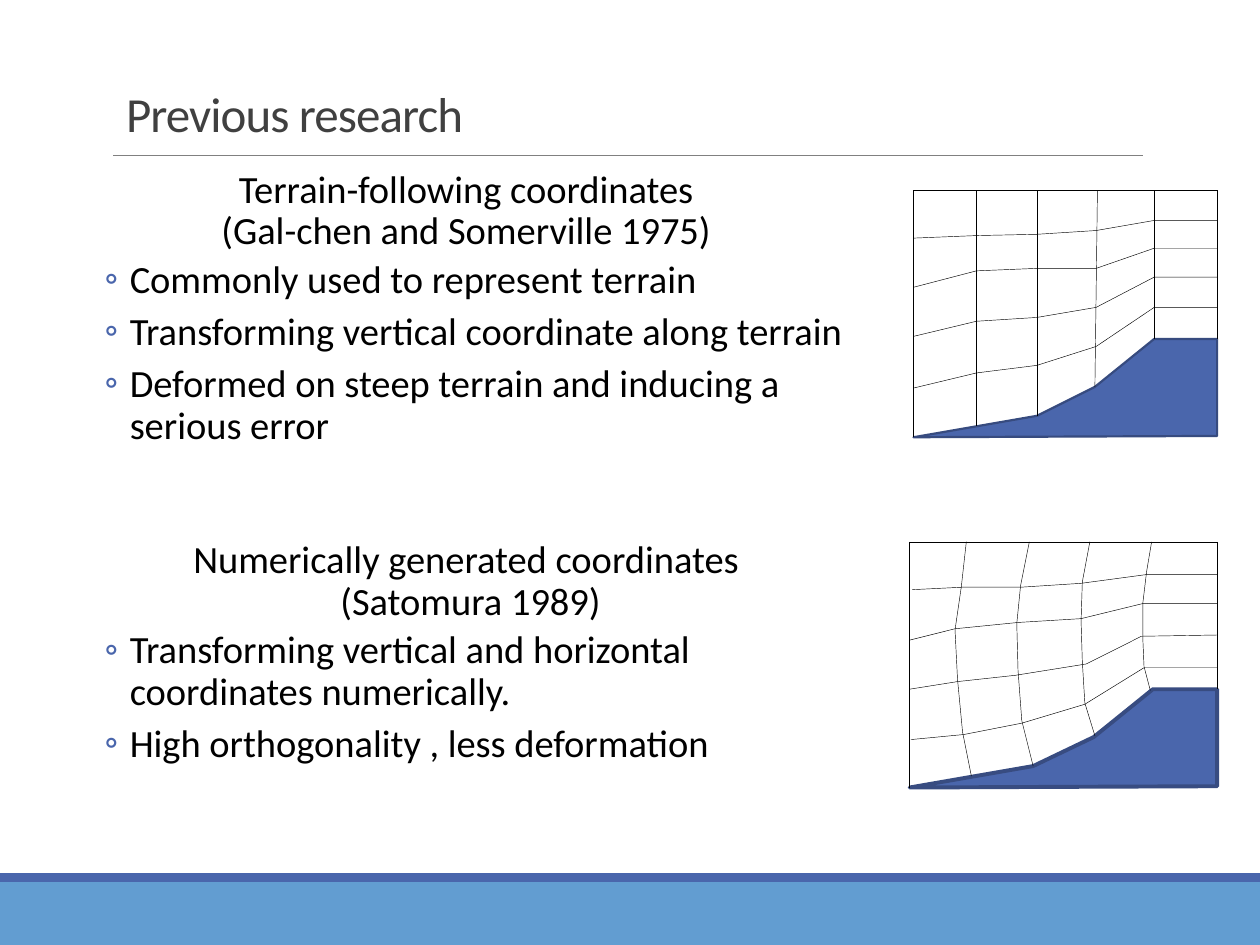
from dataclasses import dataclass

from lxml.etree import SubElement
from pptx import Presentation
from pptx.dml.color import RGBColor
from pptx.enum.shapes import MSO_CONNECTOR, MSO_SHAPE
from pptx.enum.text import MSO_ANCHOR as ANCHOR, MSO_AUTO_SIZE, PP_ALIGN as ALIGN
from pptx.oxml.ns import qn
from pptx.util import Inches, Pt

Point = tuple[float, float]
BLUE, LIGHT_BLUE, GREY, BLACK = "4A66AC", "629DD1", "808080", "000000"
GRID_WIDTH = 0.25


@dataclass
class TextBlock:
    top: float
    heading: str
    bullets: list[str]


@dataclass
class TerrainMesh:
    terrain: list[Point]
    edge: str
    edge_width: float
    straight: list[tuple[Point, Point]]
    curves: list[list[Point]]


BLOCKS = [
    TextBlock(1.3, "Terrain-following coordinates\v(Gal-chen and Somerville 1975)", [
        "Commonly used to represent terrain",
        "Transforming vertical coordinate along terrain",
        "Deformed on steep terrain and inducing a serious error"]),
    TextBlock(4.24, "Numerically generated coordinates\v (Satomura 1989)", [
        "Transforming vertical and horizontal coordinates numerically.",
        "High orthogonality , less deformation"]),
]

TERRAIN_FOLLOWING = TerrainMesh(
    terrain=[(7.25, 3.47), (8.23, 3.3), (8.69, 3.07), (9.16, 2.69), (9.66, 2.69), (9.66, 3.46)],
    edge="374B7F", edge_width=1.25,
    straight=[((7.25, 1.51), (9.67, 1.51))] + [
        ((bottom_x, bottom_y), (top_x, 1.51)) for bottom_x, bottom_y, top_x in [
            (9.66, 2.69, 9.66), (9.16, 2.69, 9.16), (8.69, 3.07, 8.71),
            (8.23, 3.3, 8.23), (7.75, 3.38, 7.75), (7.25, 3.47, 7.25)]],
    curves=[list(zip((7.25, 7.75, 8.23, 8.7, 9.16, 9.66), heights)) for heights in [
        (3.08, 2.96, 2.9, 2.75, 2.44, 2.44),
        (2.67, 2.55, 2.52, 2.44, 2.2, 2.2),
        (2.28, 2.15, 2.13, 2.13, 1.97, 1.97),
        (1.89, 1.87, 1.86, 1.83, 1.75, 1.75)]],
)

NUMERICAL = TerrainMesh(
    terrain=[(7.22, 6.25), (8.2, 6.08), (8.68, 5.85), (9.15, 5.47), (9.66, 5.47), (9.66, 6.24)],
    edge="384C81", edge_width=2.25,
    straight=[((7.22, 4.3), (9.66, 4.3)), ((9.66, 4.3), (9.66, 5.47)), ((7.22, 4.3), (7.22, 6.25))],
    curves=[
        [(9.13, 5.48), (9.08, 5.29), (9.07, 5.06), (9.07, 4.79), (9.1, 4.54), (9.14, 4.3)],
        [(7.71, 6.16), (7.64, 5.81), (7.6, 5.39), (7.58, 5), (7.63, 4.66), (7.67, 4.3)],
        [(8.2, 6.08), (8.11, 5.72), (8.08, 5.32), (8.07, 4.95), (8.1, 4.65), (8.17, 4.3)],
        [(8.69, 5.84), (8.61, 5.58), (8.59, 5.25), (8.58, 4.93), (8.59, 4.62), (8.65, 4.3)],
        [(7.22, 5.47), (7.6, 5.41), (8.06, 5.36), (8.62, 5.27), (9.06, 5.05), (9.66, 5.04)],
        [(7.23, 5.87), (7.65, 5.83), (8.11, 5.74), (8.61, 5.59), (9.08, 5.3), (9.66, 5.3)],
        [(7.22, 5.08), (7.58, 4.99), (8.08, 4.94), (8.58, 4.91), (9.07, 4.79), (9.66, 4.79)],
        [(7.24, 4.68), (7.65, 4.66), (8.11, 4.66), (8.58, 4.63), (9.1, 4.56), (9.66, 4.56)],
    ],
)


def rgb(color: str) -> RGBColor:
    return RGBColor.from_string(color)


def set_all(target, values: dict) -> None:
    for name, value in values.items():
        setattr(target, name, value)


def style_line(s, color: str, width: float) -> None:
    s.line.color.rgb = rgb(color)
    s.line.width = Pt(width)


def style_fill(s, color: str) -> None:
    s.fill.solid()
    s.fill.fore_color.rgb = rgb(color)


def add_line(shapes, start: Point, end: Point, color: str, width: float) -> None:
    s = shapes.add_connector(MSO_CONNECTOR.STRAIGHT, *map(Inches, start + end))
    style_line(s, color, width)
    SubElement(s._element.spPr, qn("a:effectLst"))


def add_path(shapes, points: list[Point], color: str, width: float, fill: str = "") -> None:
    """Draw an open polyline, or a closed outline when a fill is given."""
    first, *rest = [(Inches(x), Inches(y)) for x, y in points]
    builder = shapes.build_freeform(*first)
    builder.add_line_segments(rest, close=bool(fill))
    s = builder.convert_to_shape()
    s.shadow.inherit = False
    style_line(s, color, width)
    if fill:
        style_fill(s, fill)
    else:
        s.fill.background()


def add_mesh(slide, mesh: TerrainMesh) -> None:
    shapes = slide.shapes.add_group_shape().shapes
    add_path(shapes, mesh.terrain, mesh.edge, mesh.edge_width, BLUE)
    for start, end in mesh.straight:
        add_line(shapes, start, end, BLACK, GRID_WIDTH)
    for points in mesh.curves:
        add_path(shapes, points, BLACK, GRID_WIDTH)


def add_bar(slide, top: float, height: float, color: str) -> None:
    s = slide.shapes.add_shape(MSO_SHAPE.RECTANGLE, 0, Inches(top), Inches(10), Inches(height))
    s.shadow.inherit = False
    style_fill(s, color)
    s.line.fill.background()


def style_runs(p, size: float, color: str) -> None:
    for r in p.runs:
        set_all(r.font, {"name": "Calibri", "size": Pt(size)})
        r.font.color.rgb = rgb(color)


def add_bullet(p) -> None:
    pPr = p._p.get_or_add_pPr()
    pPr.set("marL", str(Inches(0.42)))
    pPr.set("indent", str(Inches(-0.2)))
    SubElement(SubElement(pPr, qn("a:buClr")), qn("a:srgbClr"), val=BLUE)
    SubElement(pPr, qn("a:buFont"), typeface="Calibri")
    SubElement(pPr, qn("a:buChar"), char="◦")


def add_text_block(slide, block: TextBlock) -> None:
    s = slide.shapes.add_textbox(Inches(0.61), Inches(block.top), Inches(6.08), Inches(2.74))
    tf = s.text_frame
    set_all(tf, {"word_wrap": True, "margin_left": 0, "margin_right": 0})
    p = tf.paragraphs[0]
    set_all(p, {"text": block.heading, "alignment": ALIGN.CENTER, "line_spacing": 0.9,
                "space_before": Pt(12), "space_after": Pt(2)})
    p._p.get_or_add_pPr().set("marL", str(Inches(0.1)))
    style_runs(p, 22, BLACK)
    for text in block.bullets:
        p = tf.add_paragraph()
        set_all(p, {"text": text, "level": 1, "line_spacing": 0.9,
                    "space_before": Pt(2), "space_after": Pt(4)})
        add_bullet(p)
        style_runs(p, 22, BLACK)


def set_title(slide, text: str) -> None:
    title = slide.shapes.title
    set_all(title, {"left": Inches(0.9), "top": Inches(0.31),
                    "width": Inches(8.25), "height": Inches(0.87)})
    tf = title.text_frame
    set_all(tf, {"vertical_anchor": ANCHOR.BOTTOM, "auto_size": MSO_AUTO_SIZE.NONE})
    p = tf.paragraphs[0]
    set_all(p, {"text": text, "alignment": ALIGN.LEFT, "line_spacing": 0.85})
    style_runs(p, 28, "404040")
    p.runs[0]._r.get_or_add_rPr().set("spc", "-50")


def main() -> None:
    prs = Presentation()
    set_all(prs, {"slide_width": Inches(10), "slide_height": Inches(7.5)})
    slide = prs.slides.add_slide(prs.slide_layouts[5])
    add_bar(slide, 7, 0.5, LIGHT_BLUE)
    add_bar(slide, 6.93, 0.07, BLUE)
    add_line(slide.shapes, (0.9, 1.23), (9.07, 1.23), GREY, 0.5)
    set_title(slide, "Previous research")
    for block in BLOCKS:
        add_text_block(slide, block)
    for mesh in (TERRAIN_FOLLOWING, NUMERICAL):
        add_mesh(slide, mesh)
    prs.save("out.pptx")


if __name__ == "__main__":
    main()
